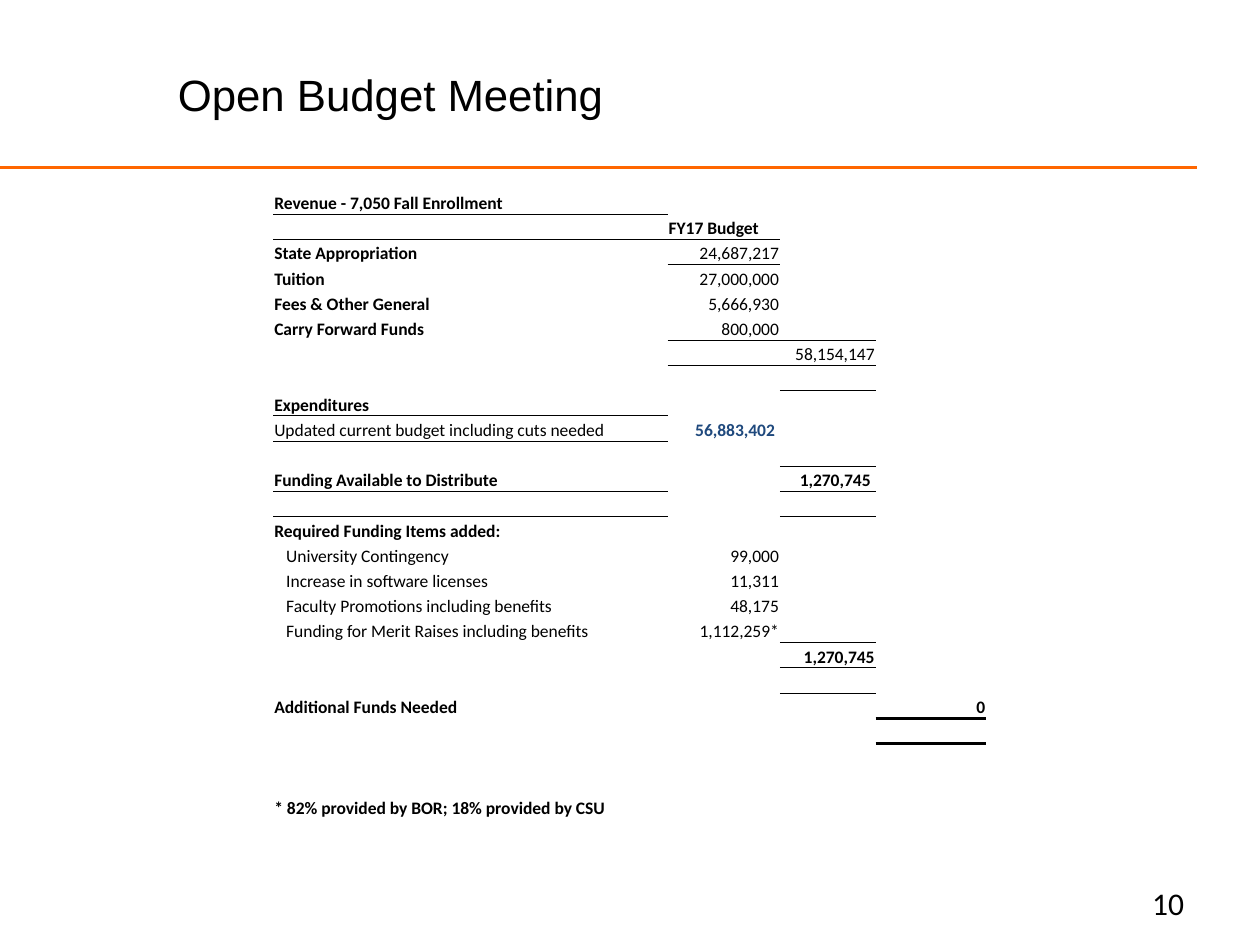
"""Build the open budget meeting slide with its revenue and expenditure table."""
import pptx
import pptx.dml.color
import pptx.enum.shapes
import pptx.enum.text
import pptx.oxml.ns
import pptx.util
from lxml import etree

Cm, Pt = pptx.util.Cm, pptx.util.Pt
qn = pptx.oxml.ns.qn
ALIGN = pptx.enum.text.PP_ALIGN
ANCHOR = pptx.enum.text.MSO_ANCHOR

THEME = {
    "text": "000000", "accent": "FF6600", "highlight": "1F497D",
    "title_font": "Arial", "body_font": "Calibri",
    "title_size": 25, "table_size": 10, "number_size": 18,
    "no_table_style": "{2D5ABB26-0587-4C30-8999-92F81FD0307C}",
}

TITLE = "Open Budget Meeting"
PAGE_NUMBER = "10"

ROW_COUNT = 25
COLUMN_WIDTHS = (7.95, 2.26, 1.93, 2.23)
TABLE_LEFT, TABLE_TOP, TABLE_HEIGHT = 5.51, 3.81, 12.7
CELL_MARGIN, LABEL_INDENT, VALUE_INSET = 0.02, 0.24, 0.08

ENTRIES = [
    (0, 0, "Revenue - 7,050 Fall Enrollment", "heading"),
    (1, 1, "FY17 Budget", "heading"),
    (2, 0, "State Appropriation", "heading"),
    (2, 1, "24,687,217", "value"),
    (3, 0, "Tuition", "heading"),
    (3, 1, "27,000,000", "value"),
    (4, 0, "Fees & Other General", "heading"),
    (4, 1, "5,666,930", "value"),
    (5, 0, "Carry Forward Funds", "heading"),
    (5, 1, "800,000", "value"),
    (6, 2, "58,154,147", "value"),
    (8, 0, "Expenditures", "heading"),
    (9, 0, "Updated current budget including cuts needed", "plain"),
    (9, 1, "56,883,402", "highlight"),
    (11, 0, "Funding Available to Distribute", "heading"),
    (11, 2, "1,270,745", "inset_total"),
    (13, 0, "Required Funding Items added:", "heading"),
    (14, 0, "University Contingency", "item"),
    (14, 1, "99,000", "value"),
    (15, 0, "Increase in software licenses", "item"),
    (15, 1, "11,311", "value"),
    (16, 0, "Faculty Promotions including benefits", "item"),
    (16, 1, "48,175", "value"),
    (17, 0, "Funding for Merit Raises including benefits", "item"),
    (17, 1, "1,112,259*", "value"),
    (18, 2, "1,270,745", "total"),
    (20, 0, "Additional Funds Needed", "heading"),
    (20, 3, "0", "total"),
    (24, 0, "* 82% provided by BOR; 18% provided by CSU", "heading"),
]

RULES = [(0, 0, 0.5), (1, 1, 0.5), (5, 1, 0.5), (5, 2, 0.5), (6, 2, 0.5),
         (8, 0, 0.5), (10, 2, 0.5), (11, 0, 0.5), (11, 2, 0.5),
         (17, 2, 0.5), (18, 2, 0.5), (20, 3, 2)]

STYLES = {
    "heading": {"bold": True},
    "plain": {},
    "item": {"left": LABEL_INDENT},
    "value": {"align": ALIGN.RIGHT},
    "total": {"align": ALIGN.RIGHT, "bold": True},
    "inset_total": {"align": ALIGN.RIGHT, "bold": True, "right": VALUE_INSET},
    "highlight": {"align": ALIGN.RIGHT, "bold": True, "right": VALUE_INSET,
                  "color": "highlight"},
}


def set_attributes(target, values):
    """Set every named attribute on the target."""
    for name, value in values.items():
        setattr(target, name, value)


def write_text(paragraph, text, font, size, align, bold=False, color="text"):
    """Write one formatted run into the paragraph."""
    paragraph.alignment = align
    run = paragraph.add_run()
    run.text = text
    set_attributes(run.font, {"name": THEME[font], "size": Pt(THEME[size]), "bold": bold})
    run.font.color.rgb = pptx.dml.color.RGBColor.from_string(THEME[color])


def add_label(slide, box, text, **text_format):
    """Add a one-line text box without insets."""
    frame = slide.shapes.add_textbox(*map(Cm, box)).text_frame
    set_attributes(frame, {
        "word_wrap": True, "vertical_anchor": ANCHOR.MIDDLE, "margin_left": 0,
        "margin_right": 0, "margin_top": 0, "margin_bottom": 0})
    write_text(frame.paragraphs[0], text, **text_format)


def add_divider(slide):
    """Add the line below the title."""
    line = slide.shapes.add_connector(
        pptx.enum.shapes.MSO_CONNECTOR.STRAIGHT, Cm(0), Cm(3.38), Cm(24.13), Cm(3.38))
    line.line.color.rgb = pptx.dml.color.RGBColor.from_string(THEME["accent"])
    line.line.width = Pt(1.5)
    etree.SubElement(line._element.spPr, qn("a:effectLst"))


def add_rule(cell, side, weight):
    """Draw a border on one side of the cell."""
    border = etree.Element(qn(side), w=str(Pt(weight)))
    fill = etree.SubElement(border, qn("a:solidFill"))
    etree.SubElement(fill, qn("a:srgbClr"), val=THEME["text"])
    cell._tc.get_or_add_tcPr().insert(0, border)


def add_budget_table(slide):
    """Add the budget table with its entries and rules."""
    table = slide.shapes.add_table(
        ROW_COUNT, len(COLUMN_WIDTHS), Cm(TABLE_LEFT), Cm(TABLE_TOP),
        Cm(sum(COLUMN_WIDTHS)), Cm(TABLE_HEIGHT)).table
    set_attributes(table, {"first_row": False, "horz_banding": False})
    table._tbl.tblPr.find(qn("a:tableStyleId")).text = THEME["no_table_style"]
    for column, width in zip(table.columns, COLUMN_WIDTHS):
        column.width = Cm(width)
    for cell in table.iter_cells():
        cell.fill.background()
        set_attributes(cell, {
            "vertical_anchor": ANCHOR.BOTTOM, "margin_left": Cm(CELL_MARGIN),
            "margin_right": Cm(CELL_MARGIN), "margin_top": Cm(CELL_MARGIN),
            "margin_bottom": 0})
    for row, column, text, style_name in ENTRIES:
        cell, style = table.cell(row, column), STYLES[style_name]
        cell.margin_left = Cm(CELL_MARGIN + style.get("left", 0))
        cell.margin_right = Cm(CELL_MARGIN + style.get("right", 0))
        write_text(cell.text_frame.paragraphs[0], text, "body_font", "table_size",
                   style.get("align", ALIGN.LEFT), style.get("bold", False),
                   style.get("color", "text"))
    for cell in table.iter_cells():
        etree.SubElement(cell.text_frame.paragraphs[0]._p, qn("a:endParaRPr"),
                         sz=str(THEME["table_size"] * 100))
    for row, column, weight in RULES:
        add_rule(table.cell(row, column), "a:lnB", weight)
    for row, column, weight in RULES:
        add_rule(table.cell(row + 1, column), "a:lnT", weight)


def main():
    """Build and save the presentation."""
    presentation = pptx.Presentation()
    set_attributes(presentation, {"slide_width": Cm(25.4), "slide_height": Cm(19.05)})
    slide = presentation.slides.add_slide(presentation.slide_layouts[6])
    add_divider(slide)
    add_label(slide, (0.15, 1.27, 15.44, 1.27), TITLE,
              font="title_font", size="title_size", align=ALIGN.CENTER)
    add_label(slide, (18.21, 17.7, 5.66, 1.02), PAGE_NUMBER,
              font="body_font", size="number_size", align=ALIGN.RIGHT)
    add_budget_table(slide)
    presentation.save("out.pptx")


if __name__ == "__main__":
    main()
